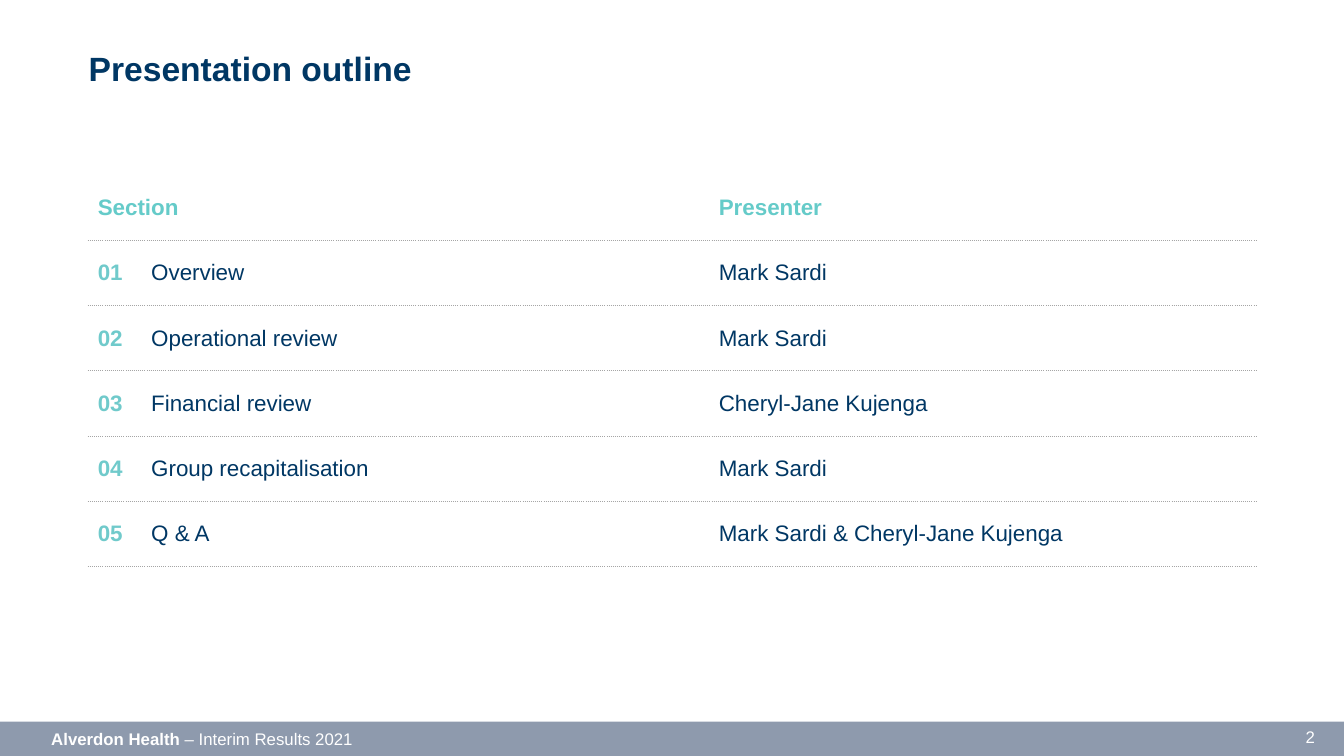
import dataclasses

import lxml.etree
import pptx
import pptx.dml.color
import pptx.enum.shapes
import pptx.enum.text
import pptx.oxml.ns
import pptx.util

ALIGN = pptx.enum.text.PP_ALIGN
ANCHOR = pptx.enum.text.MSO_ANCHOR
SLIDE_W, SLIDE_H = 13.33, 7.5


@dataclasses.dataclass(frozen=True)
class Theme:
    font: str = "Arial"
    navy: str = "003764"
    teal: str = "65CBC9"
    number_teal: str = "70CACB"
    band: str = "8E9AAD"
    rule: str = "A5A5A5"
    white: str = "FFFFFF"
    title_size: int = 24
    table_size: int = 16
    footer_size: int = 12


THEME = Theme()

AGENDA = [
    ("Overview", "Mark Sardi"),
    ("Operational review", "Mark Sardi"),
    ("Financial review", "Cheryl-Jane Kujenga"),
    ("Group recapitalisation", "Mark Sardi"),
    ("Q & A", "Mark Sardi & Cheryl-Jane Kujenga"),
]


def inches(*lengths):
    return [pptx.util.Inches(length) for length in lengths]


def rgb(color):
    return pptx.dml.color.RGBColor.from_string(color)


def add_run(paragraph, text, *, size, color, bold=False):
    run = paragraph.add_run()
    run.text = text
    run.font.name = THEME.font
    run.font.size = pptx.util.Pt(size)
    run.font.bold = bold
    run.font.color.rgb = rgb(color)


def write(slide, box, parts, *, size, color, align=ALIGN.LEFT,
          anchor=ANCHOR.TOP, inset=None, grow=False):
    """Add a text box from (text, bold) parts."""
    frame = slide.shapes.add_textbox(*inches(*box)).text_frame
    frame.word_wrap = True
    frame.vertical_anchor = anchor
    if grow:
        frame.auto_size = pptx.enum.text.MSO_AUTO_SIZE.SHAPE_TO_FIT_TEXT
    if inset is not None:
        frame.margin_left = frame.margin_right = pptx.util.Inches(inset)
        frame.margin_top = frame.margin_bottom = pptx.util.Inches(inset)
    paragraph = frame.paragraphs[0]
    paragraph.alignment = align
    for text, bold in parts:
        add_run(paragraph, text, size=size, color=color, bold=bold)


def set_border(cell, side, color=None):
    """Dotted border in the given colour, or none."""
    qn = pptx.oxml.ns.qn
    line = lxml.etree.SubElement(cell._tc.get_or_add_tcPr(), qn(f"a:ln{side}"))
    if color is None:
        lxml.etree.SubElement(line, qn("a:noFill"))
        return
    line.set("w", str(pptx.util.Pt(0.75)))
    fill = lxml.etree.SubElement(line, qn("a:solidFill"))
    lxml.etree.SubElement(fill, qn("a:srgbClr"), val=color)
    lxml.etree.SubElement(line, qn("a:prstDash"), val="sysDot")


def fill_cell(cell, text, *, color, bold=False, rule_above=True):
    cell.margin_left = cell.margin_right = pptx.util.Inches(0.1)
    cell.margin_top = cell.margin_bottom = pptx.util.Inches(0.19)
    cell.vertical_anchor = ANCHOR.MIDDLE
    set_border(cell, "L")
    set_border(cell, "R")
    set_border(cell, "T", THEME.rule if rule_above else None)
    set_border(cell, "B", THEME.rule)
    cell.fill.background()
    paragraph = cell.text_frame.paragraphs[0]
    paragraph.space_after = pptx.util.Pt(3)
    add_run(paragraph, text, size=THEME.table_size, color=color, bold=bold)


def add_footer(slide, box):
    left, top, width, height = box
    band = slide.shapes.add_shape(
        pptx.enum.shapes.MSO_SHAPE.RECTANGLE, *inches(*box))
    band.shadow.inherit = False
    band.fill.solid()
    band.fill.fore_color.rgb = rgb(THEME.band)
    band.line.fill.background()
    style = dict(size=THEME.footer_size, color=THEME.white, grow=True)
    # Page number
    write(slide, (left + width - 3.82, top, 3.63, 0.3), [("2", False)],
          align=ALIGN.RIGHT, **style)
    # Company and report
    write(slide, (left + 0.41, top + 0.02, 5.92, 0.3),
          [("Alverdon Health", True), (" – Interim Results 2021", False)],
          **style)


def add_title(slide, box):
    write(slide, box, [("Presentation outline", True)], size=THEME.title_size,
          color=THEME.navy, anchor=ANCHOR.BOTTOM, inset=0)


def add_agenda(slide, box):
    left, top, width, height = box
    number_w, section_w = 0.53, 5.63
    column_widths = (number_w, section_w, width - number_w - section_w)
    row_count = len(AGENDA) + 1
    agenda = slide.shapes.add_table(
        row_count, len(column_widths), *inches(*box)).table
    agenda.first_row = agenda.horz_banding = False
    for column, column_w in zip(agenda.columns, column_widths):
        column.width = pptx.util.Inches(column_w)
    for row in agenda.rows:
        row.height = pptx.util.Inches(height / row_count)

    # Header row
    agenda.cell(0, 0).merge(agenda.cell(0, 1))
    for column, heading in ((0, "Section"), (1, ""), (2, "Presenter")):
        fill_cell(agenda.cell(0, column), heading, color=THEME.teal,
                  bold=True, rule_above=False)

    # Numbered sections
    for number, (section, presenter) in enumerate(AGENDA, 1):
        fill_cell(agenda.cell(number, 0), f"{number:02d}",
                  color=THEME.number_teal, bold=True)
        fill_cell(agenda.cell(number, 1), section, color=THEME.navy)
        fill_cell(agenda.cell(number, 2), presenter, color=THEME.navy)


def main():
    deck = pptx.Presentation()
    deck.slide_width, deck.slide_height = inches(SLIDE_W, SLIDE_H)
    slide = deck.slides.add_slide(deck.slide_layouts[6])
    footer_h = 0.34
    add_footer(slide, (0, SLIDE_H - footer_h, SLIDE_W, footer_h))
    add_title(slide, (0.88, 0.41, 11.6, 0.47))
    add_agenda(slide, (0.87, 1.74, 11.6, 3.85))
    deck.save("out.pptx")


if __name__ == "__main__":
    main()
